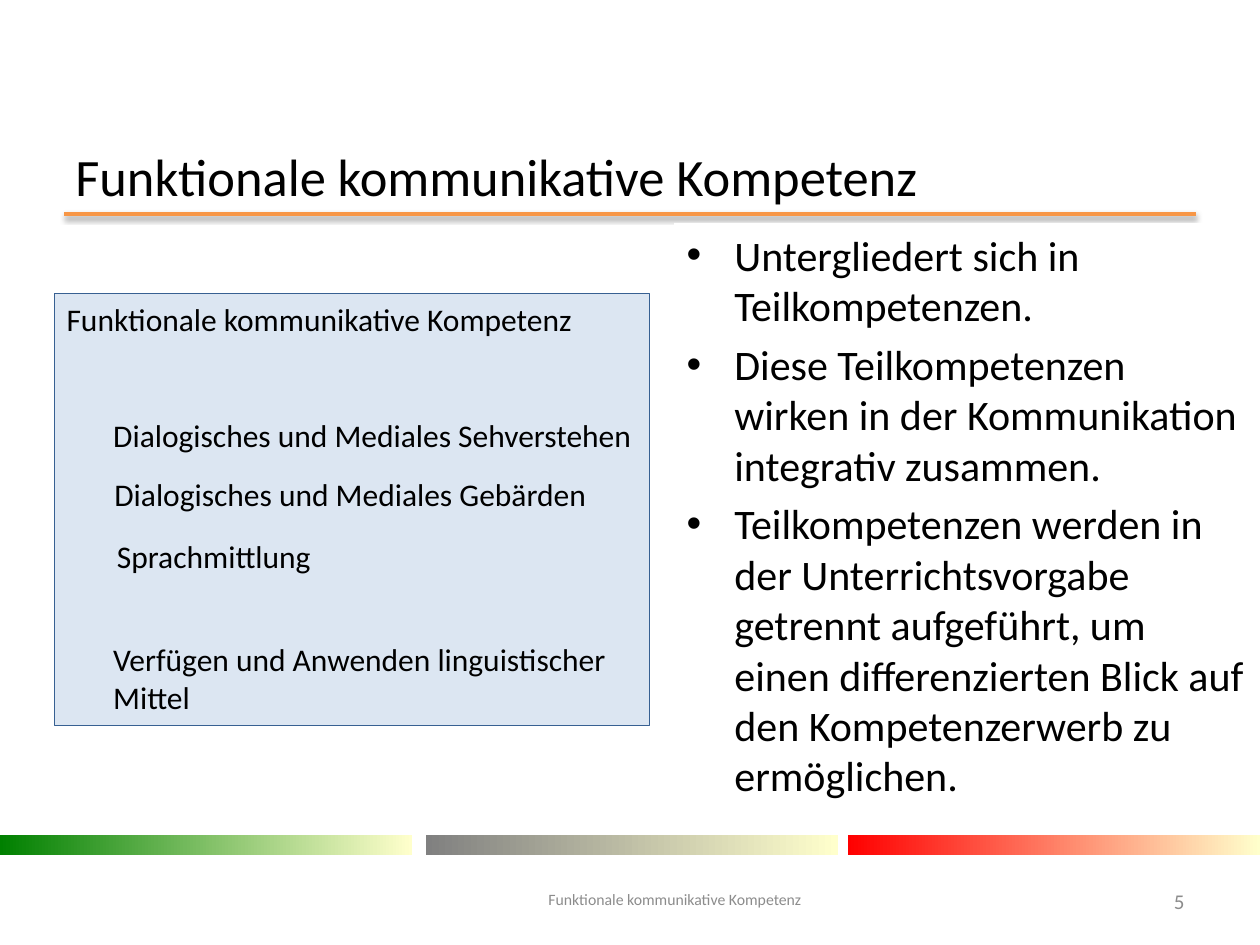
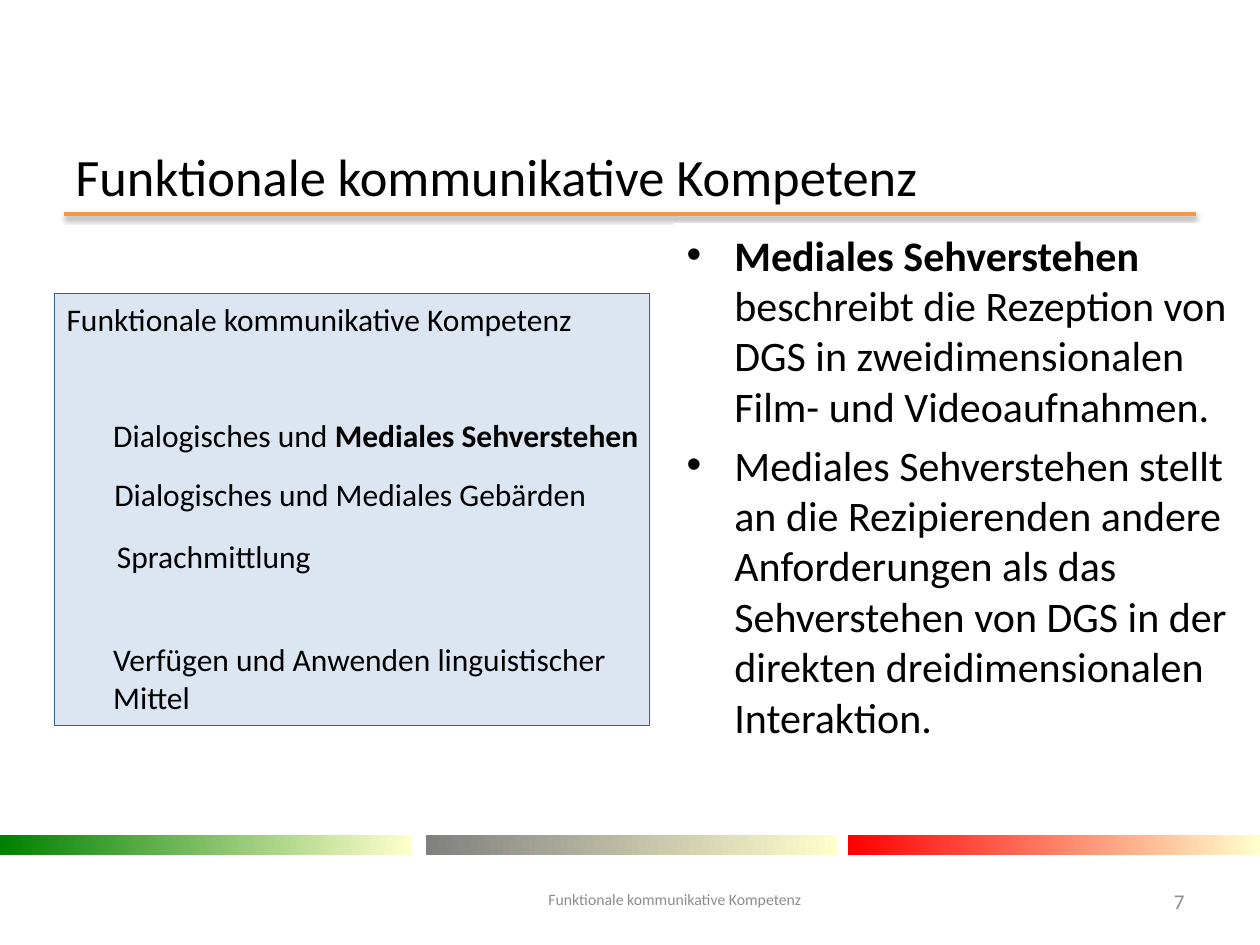
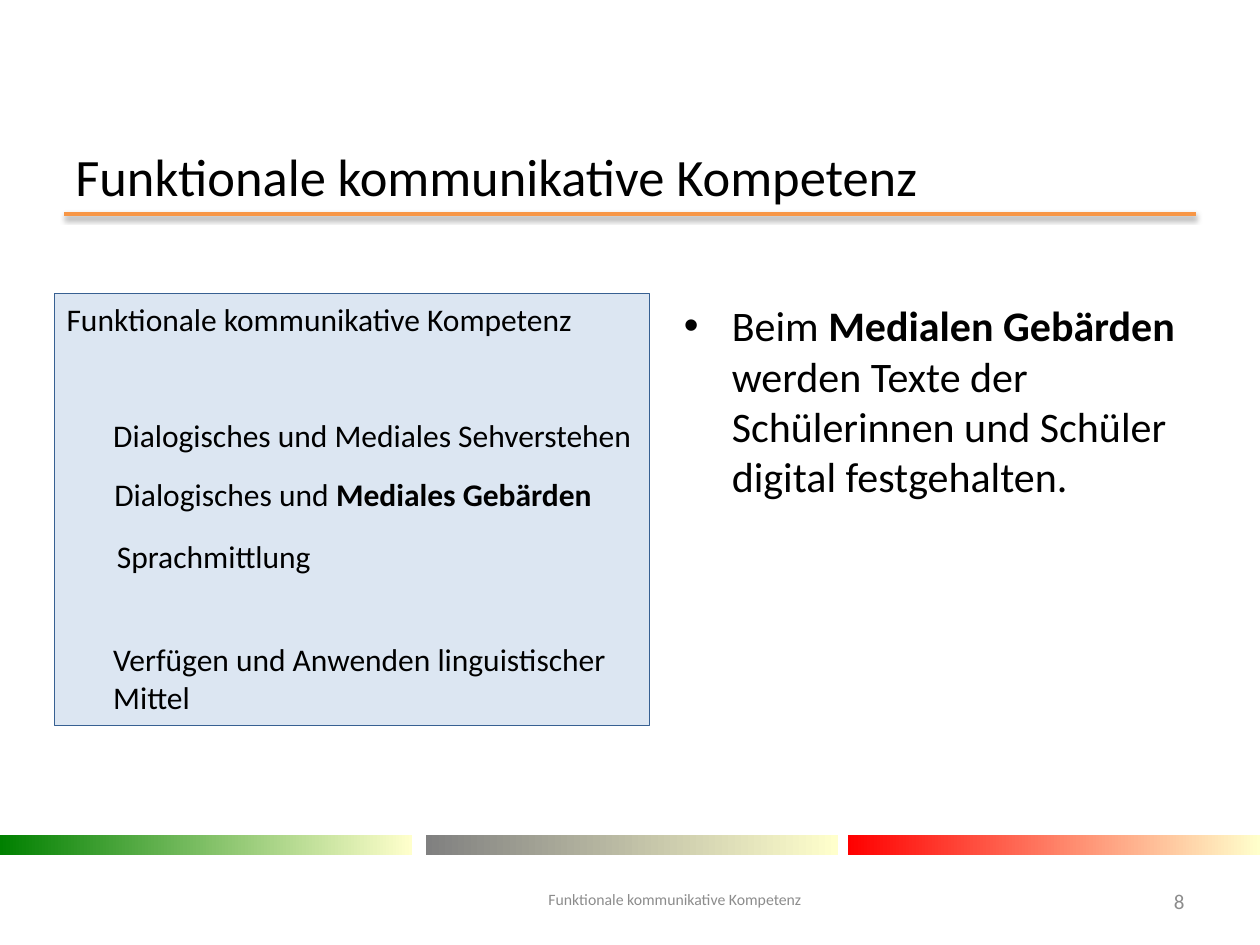
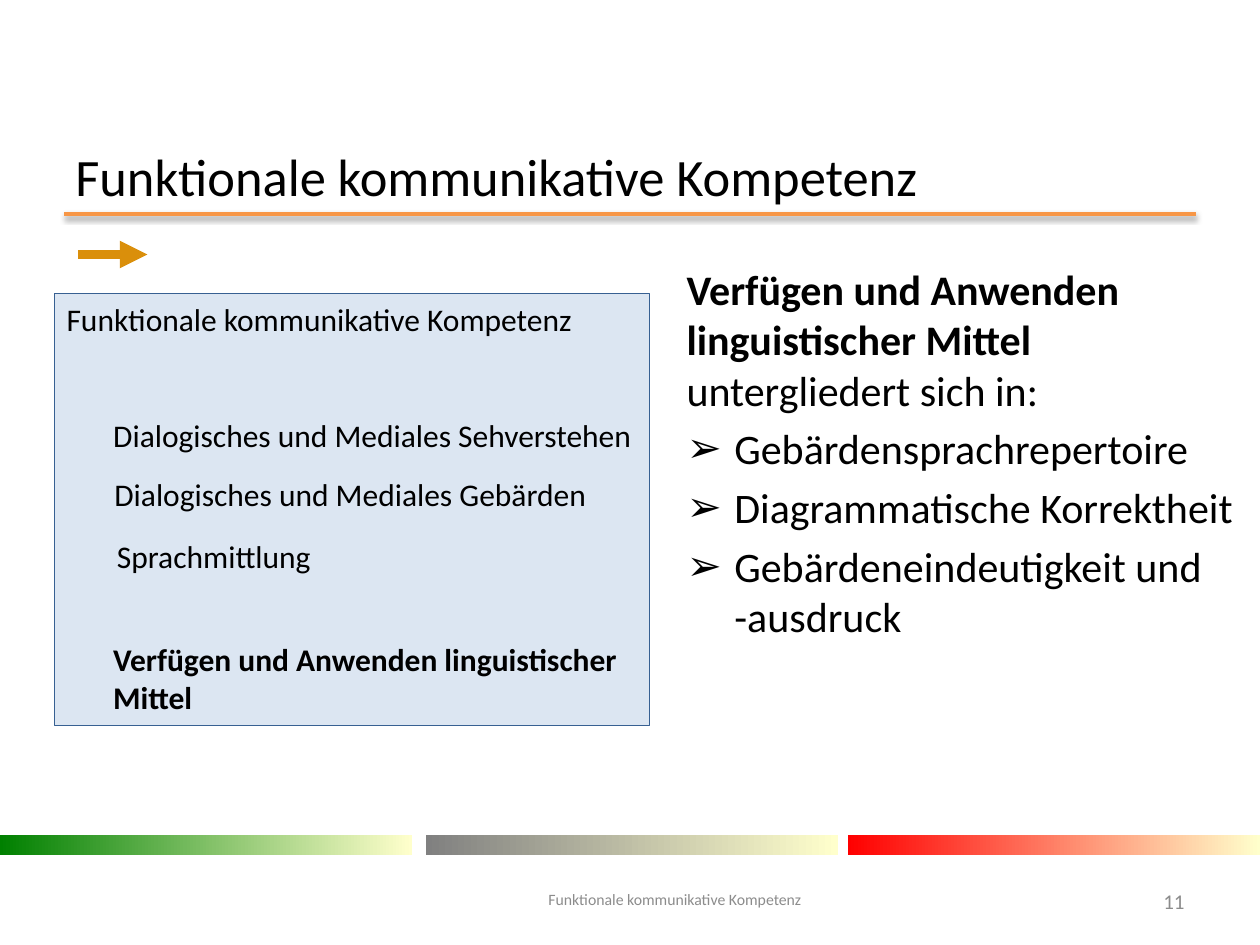
from lxml.etree import SubElement
from pptx import Presentation
from pptx.dml.color import RGBColor
from pptx.enum.shapes import MSO_CONNECTOR, MSO_SHAPE
from pptx.enum.text import MSO_ANCHOR, PP_ALIGN
from pptx.oxml.ns import qn
from pptx.util import Inches, Pt

FONT = "Calibri"
BLACK, WHITE, GREY = "000000", "FFFFFF", "8C8C8C"
PANEL_FILL, PANEL_LINE = "DCE6F2", "376092"
RULE_ORANGE, ARROW_ORANGE = "F79646", "DA8F0B"
BAND_END = "FFFFCC"
BANDS = [(0, "008000"), (3.38, "808080"), (6.73, "FF0000")]
TOPIC = "Funktionale kommunikative Kompetenz"
SEEING = "Dialogisches und Mediales Sehverstehen"
SIGNING = "Dialogisches und Mediales Gebärden"
MEDIATION = "Sprachmittlung"
MEANS = "Verfügen und Anwenden linguistischer Mittel"
SKILL_BOXES = [
    (0.8, 3.25, 4.42, 0.4),
    (0.81, 3.72, 4.26, 0.4),
    (0.83, 4.21, 4.26, 0.4),
    (0.8, 5.03, 4.26, 0.71),
]

# Text between asterisks is bold.
SLIDES = [
    {
        "number": "5",
        "body_box": (5.35, 1.77, 4.62, 4.57),
        "body": [
            ("•", "Untergliedert sich in Teilkompetenzen."),
            ("•", "Diese Teilkompetenzen wirken in der Kommunikation integrativ zusammen."),
            ("•", "Teilkompetenzen werden in der Unterrichtsvorgabe getrennt aufgeführt, "
                  "um einen differenzierten Blick auf den Kompetenzerwerb zu ermöglichen."),
        ],
        "skills": [SEEING, SIGNING, MEDIATION, MEANS],
    },
    {
        "number": "7",
        "body_box": (5.35, 1.77, 4.62, 4.57),
        "body": [
            ("•", "*Mediales Sehverstehen* beschreibt die Rezeption von DGS in "
                  "zweidimensionalen Film- und Videoaufnahmen."),
            ("•", "Mediales Sehverstehen stellt an die Rezipierenden andere Anforderungen "
                  "als das Sehverstehen von DGS in der direkten dreidimensionalen Interaktion."),
        ],
        "skills": ["Dialogisches und *Mediales Sehverstehen*", SIGNING, MEDIATION, MEANS],
    },
    {
        "number": "8",
        "body_box": (5.33, 2.33, 4.62, 3.94),
        "body": [
            ("•", "Beim *Medialen Gebärden* werden Texte der Schülerinnen und Schüler "
                  "digital festgehalten."),
        ],
        "skills": [SEEING, "Dialogisches und *Mediales Gebärden*", MEDIATION, MEANS],
    },
    {
        "number": "11",
        "body_box": (5.35, 2.04, 4.62, 4.39),
        "body": [
            ("", f"*{MEANS} *untergliedert sich in:"),
            ("➢", "Gebärdensprachrepertoire"),
            ("➢", "Diagrammatische Korrektheit"),
            ("➢", "Gebärdeneindeutigkeit und \n-ausdruck"),
        ],
        "skills": [SEEING, SIGNING, MEDIATION, f"*{MEANS}*"],
        "arrow": True,
    },
]


def rgb(value):
    return RGBColor.from_string(value)


def write(shape, entries, size, color=BLACK, align=PP_ALIGN.LEFT,
          anchor=MSO_ANCHOR.TOP, line_spacing=1.0):
    frame = shape.text_frame
    frame.word_wrap = True
    frame.vertical_anchor = anchor
    for index, (bullet, text) in enumerate(entries):
        paragraph = frame.add_paragraph() if index else frame.paragraphs[0]
        parts = text.split("*")
        paragraph.text = parts[0]
        for position, part in enumerate(parts[1:], 1):
            if part:
                run = paragraph.add_run()
                run.text = part
                run.font.bold = position % 2 == 1
        paragraph.alignment = align
        paragraph.line_spacing = line_spacing
        if index:
            paragraph.space_before = Pt(size * 0.2)
        if bullet:
            properties = paragraph._p.get_or_add_pPr()
            properties.set("marL", str(Inches(0.38)))
            properties.set("indent", str(-Inches(0.38)))
            SubElement(properties, qn("a:buFont"), typeface="Arial")
            SubElement(properties, qn("a:buChar"), char=bullet)
        for run in paragraph.runs:
            run.font.name = FONT
            run.font.size = Pt(size)
            run.font.color.rgb = rgb(color)


prs = Presentation()
prs.slide_width = Inches(10)
prs.slide_height = Inches(7.5)

for content in SLIDES:
    slide = prs.slides.add_slide(prs.slide_layouts[6])
    shapes = slide.shapes

    rule = shapes.add_connector(MSO_CONNECTOR.STRAIGHT, Inches(0.51), Inches(1.7),
                                Inches(9.49), Inches(1.7))
    rule.line.color.rgb = rgb(RULE_ORANGE)
    rule.line.width = Pt(2)
    effects = SubElement(rule._element.spPr, qn("a:effectLst"))
    shadow = SubElement(effects, qn("a:outerShdw"), blurRad=str(Pt(3.1)),
                        dist=str(Pt(1.6)), dir="5400000", rotWithShape="0")
    shadow_color = SubElement(shadow, qn("a:srgbClr"), val=BLACK)
    SubElement(shadow_color, qn("a:alpha"), val="38000")

    for left, start in BANDS:
        band = shapes.add_shape(MSO_SHAPE.RECTANGLE, Inches(left), Inches(6.63),
                                Inches(3.27), Inches(0.16))
        band.shadow.inherit = False
        band.line.fill.background()
        band.fill.gradient()
        band.fill.gradient_angle = 0
        for stop, color in zip(band.fill.gradient_stops, (start, BAND_END)):
            stop.color.rgb = rgb(color)

    title = shapes.add_textbox(Inches(0.5), Inches(1.23), Inches(9), Inches(0.39))
    write(title, [("", TOPIC)], 30, anchor=MSO_ANCHOR.MIDDLE, line_spacing=0.9)

    body = shapes.add_textbox(*map(Inches, content["body_box"]))
    body.fill.solid()
    body.fill.fore_color.rgb = rgb(WHITE)
    write(body, content["body"], 24)

    footer = shapes.add_textbox(Inches(3.74), Inches(6.95), Inches(3.23), Inches(0.4))
    write(footer, [("", TOPIC)], 9, GREY, PP_ALIGN.CENTER, MSO_ANCHOR.MIDDLE, 0.9)
    page_number = shapes.add_textbox(Inches(8.86), Inches(6.95), Inches(0.64), Inches(0.4))
    write(page_number, [("", content["number"])], 12, GREY, PP_ALIGN.RIGHT, MSO_ANCHOR.MIDDLE)

    panel = shapes.add_shape(MSO_SHAPE.RECTANGLE, Inches(0.43), Inches(2.33),
                             Inches(4.72), Inches(3.43))
    panel.shadow.inherit = False
    panel.fill.solid()
    panel.fill.fore_color.rgb = rgb(PANEL_FILL)
    panel.line.color.rgb = rgb(PANEL_LINE)
    panel.line.width = Pt(0.25)
    write(panel, [("", TOPIC)], 18)

    for box, skill in zip(SKILL_BOXES, content["skills"]):
        write(shapes.add_textbox(*map(Inches, box)), [("", skill)], 18)

    if content.get("arrow"):
        arrow = shapes.add_connector(MSO_CONNECTOR.STRAIGHT, Inches(0.62), Inches(2.02),
                                     Inches(1.17), Inches(2.02))
        arrow.line.color.rgb = rgb(ARROW_ORANGE)
        arrow.line.width = Pt(5.25)
        SubElement(arrow.line._get_or_add_ln(), qn("a:tailEnd"), type="triangle")
        SubElement(arrow._element.spPr, qn("a:effectLst"))

prs.save("out.pptx")
